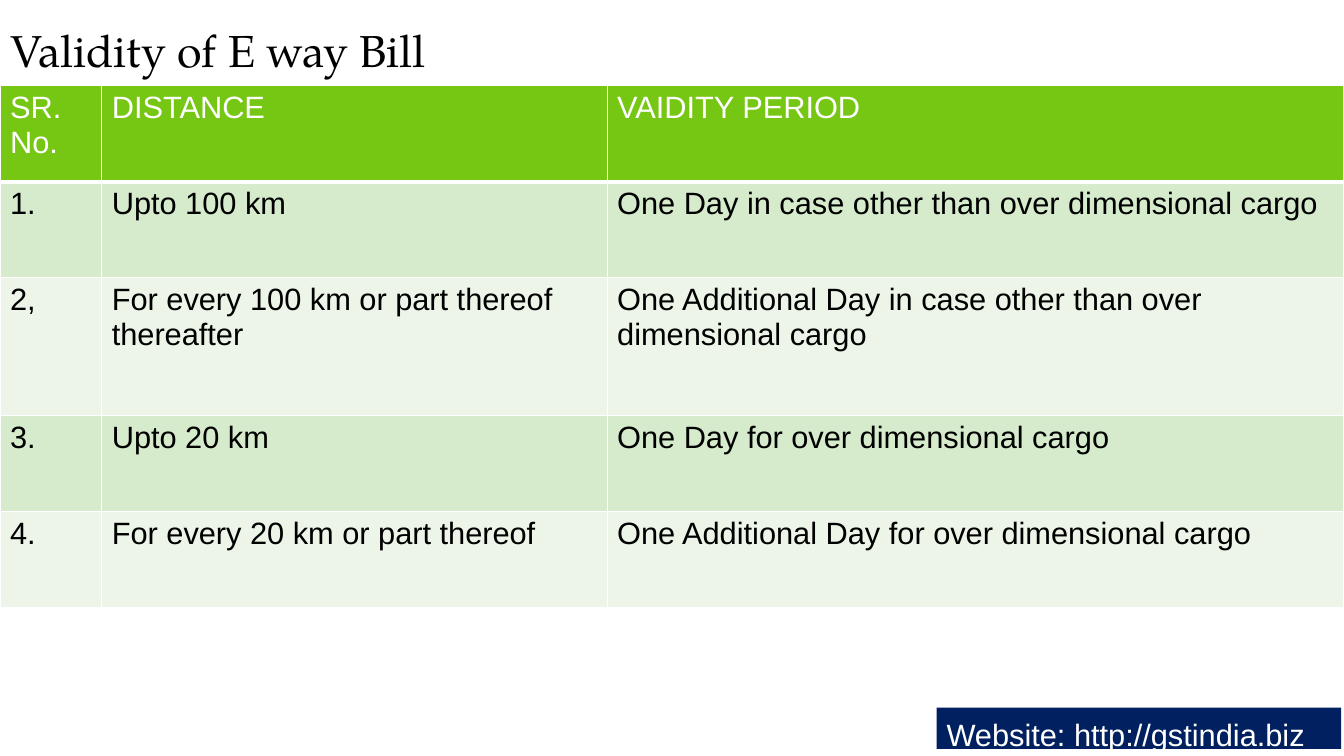
from lxml import etree
from pptx import Presentation
from pptx.dml.color import RGBColor
from pptx.enum.shapes import MSO_SHAPE
from pptx.enum.text import MSO_ANCHOR, PP_ALIGN
from pptx.oxml.ns import qn
from pptx.util import Pt

RECT = MSO_SHAPE.RECTANGLE
TOP, BOTTOM = MSO_ANCHOR.TOP, MSO_ANCHOR.BOTTOM
LEFT = PP_ALIGN.LEFT

COLORS = {
    "white": "FFFFFF",
    "black": "000000",
    "navy": "002060",
    "head": "76C714",
    "odd": "D6EBCC",
    "even": "ECF5E7",
}
ROWS = [
    ("SR. No.", "DISTANCE", "VAIDITY PERIOD"),
    ("1.", "Upto 100 km", "One Day in case other than over dimensional cargo"),
    ("2,", "For every 100 km or part thereof thereafter",
     "One Additional Day in case other than over dimensional cargo"),
    ("3.", "Upto 20 km", "One Day for over dimensional cargo"),
    ("4.", "For every 20 km or part thereof",
     "One Additional Day for over dimensional cargo"),
]
WIDTHS = [72.7, 361, 526.3]
HEIGHTS = [68.6, 68.6, 98.6, 68.6, 68.6]


class Deck:
    body, serif = "Arial", "TeX Gyre Pagella"

    def __init__(self, wide, high):
        self.prs = Presentation()
        self.prs.slide_width, self.prs.slide_height = Pt(wide), Pt(high)
        self.slide = self.prs.slides.add_slide(self.prs.slide_layouts[5])

    def color(self, name):
        return RGBColor.from_string(COLORS[name])

    def paint(self, item, name):
        item.fill.solid()
        item.fill.fore_color.rgb = self.color(name)

    def label(self, frame, text, color, size=22, face=body, space=None):
        frame.text = text
        frame.word_wrap = True
        para = frame.paragraphs[0]
        para.alignment = LEFT
        para.line_spacing = space
        font = para.runs[0].font
        font.name, font.size, font.bold = face, Pt(size), False
        font.color.rgb = self.color(color)

    def title(self, text, x, y, w, h):
        box = self.slide.shapes.title
        box.left, box.top, box.width, box.height = Pt(x), Pt(y), Pt(w), Pt(h)
        self.label(box.text_frame, text, "black", 32, self.serif, 0.9)
        box.text_frame.vertical_anchor = BOTTOM

    def banner(self, text, x, y, w, h):
        box = self.slide.shapes.add_shape(RECT, Pt(x), Pt(y), Pt(w), Pt(h))
        box.shadow.inherit = False
        self.paint(box, "navy")
        box.line.fill.background()
        self.label(box.text_frame, text, "white", space=1.07)
        box.text_frame.vertical_anchor = TOP

    def border(self, cell, base):
        props = cell._tc.get_or_add_tcPr()
        for side, width in zip("LRTB", (1, 1, 1, base)):
            line = etree.SubElement(props, qn(f"a:ln{side}"), w=str(Pt(width)))
            fill = etree.SubElement(line, qn("a:solidFill"))
            etree.SubElement(fill, qn("a:srgbClr"), val=COLORS["white"])

    def table(self, rows, widths, heights, x, y):
        grid = self.slide.shapes.add_table(
            len(rows), len(widths), Pt(x), Pt(y),
            Pt(sum(widths)), Pt(sum(heights))).table
        for col, width in zip(grid.columns, widths):
            col.width = Pt(width)
        for r, (row, height) in enumerate(zip(rows, heights)):
            grid.rows[r].height = Pt(height)
            band = ("odd" if r % 2 else "even") if r else "head"
            for c, text in enumerate(row):
                cell = grid.cell(r, c)
                self.border(cell, 1 if r else 3)
                self.paint(cell, band)
                self.label(cell.text_frame, text, "black" if r else "white")


def main():
    deck = Deck(960, 540)
    # Website banner
    deck.banner("Website: http://gstindia.biz", 669, 505.5, 289, 29.5)
    # Validity table
    deck.table(ROWS, WIDTHS, HEIGHTS, 0, 61.2)
    # Title
    deck.title("Validity of E way Bill", 0, -2, 879, 61)
    deck.prs.save("out.pptx")


if __name__ == "__main__":
    main()
